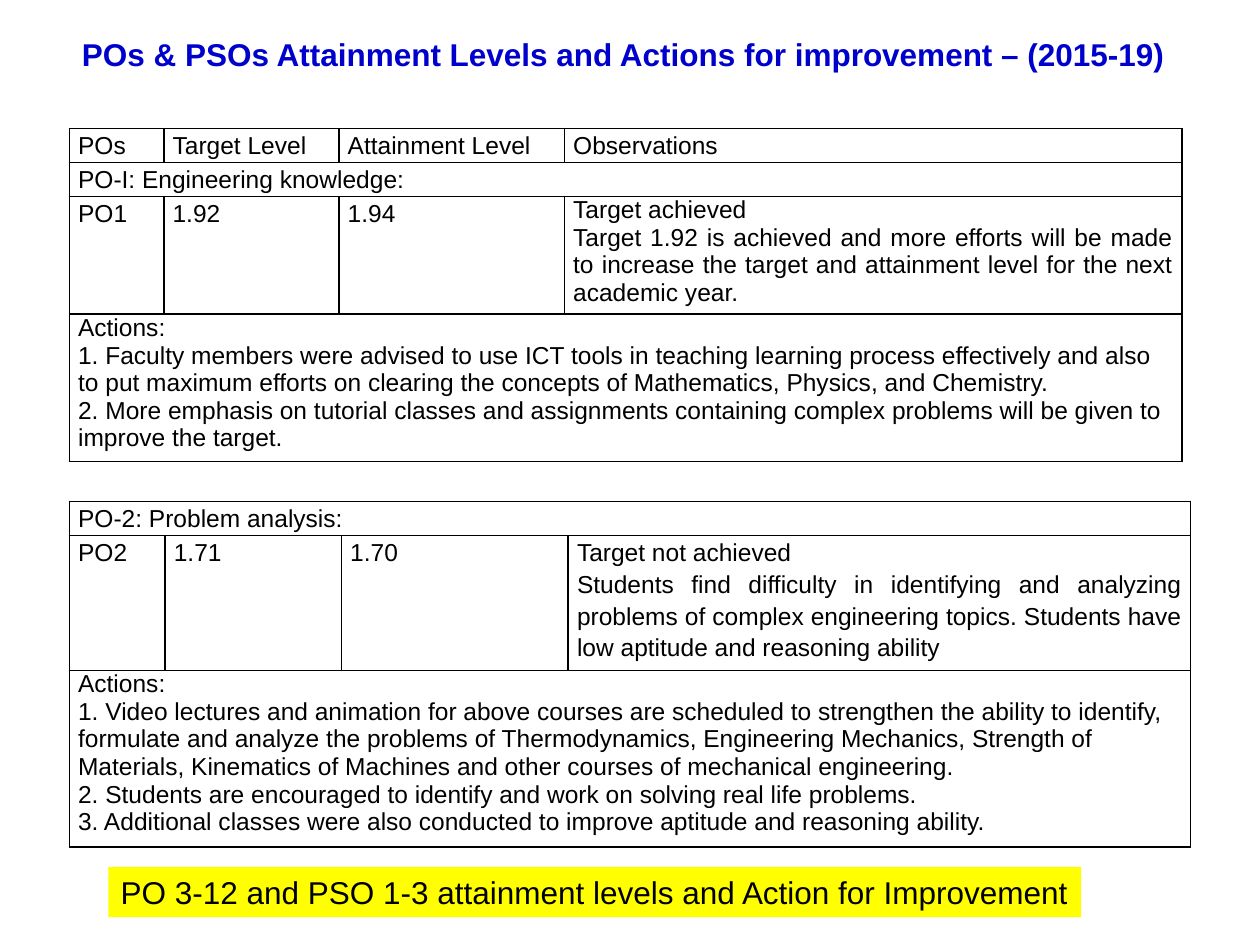
import dataclasses
import typing

import pptx
import pptx.dml.color
import pptx.enum.text
import pptx.oxml
import pptx.oxml.ns
import pptx.util

Inches, Pt = pptx.util.Inches, pptx.util.Pt
RGBColor = pptx.dml.color.RGBColor
PP_ALIGN = pptx.enum.text.PP_ALIGN
MSO_ANCHOR = pptx.enum.text.MSO_ANCHOR
MSO_AUTO_SIZE = pptx.enum.text.MSO_AUTO_SIZE

BLUE = RGBColor(0x00, 0x00, 0xCC)
BLACK = RGBColor(0x00, 0x00, 0x00)
YELLOW = RGBColor(0xFF, 0xFF, 0x00)
FONT = "Arial"


@dataclasses.dataclass
class Cell:
    lines: list[str]
    align: typing.Any = PP_ALIGN.JUSTIFY
    spacing: float | None = 1.15


@dataclasses.dataclass
class Row:
    height: float
    cells: list[Cell]  # a single cell spans the whole row


@dataclasses.dataclass
class Grid:
    left: float
    top: float
    widths: list[float]
    rows: list[Row]


def labels(*texts: str) -> list[Cell]:
    return [Cell([text]) for text in texts]


def actions(*items: str) -> list[Cell]:
    return [Cell(["Actions:", *items], PP_ALIGN.LEFT, None)]


ATTAINMENT = [
    Grid(0.55, 1.02, [0.75, 1.39, 1.79, 4.9], [
        Row(0.27, labels("POs", "Target Level", "Attainment Level", "Observations")),
        Row(0.27, labels("PO-I: Engineering knowledge:")),
        Row(0.93, labels("PO1", "1.92", "1.94") + [Cell([
            "Target achieved",
            "Target 1.92 is achieved and more efforts will be made to increase "
            "the target and attainment level for the next academic year.",
        ], spacing=None)]),
        Row(1.17, actions(
            "1. Faculty members were advised to use ICT tools in teaching learning "
            "process effectively and also to put maximum efforts on clearing the "
            "concepts of Mathematics, Physics, and Chemistry.",
            "2. More emphasis on tutorial classes and assignments containing complex "
            "problems will be given to improve the target.",
        )),
    ]),
    Grid(0.55, 3.98, [0.76, 1.4, 1.8, 4.94], [
        Row(0.27, labels("PO-2: Problem analysis:")),
        Row(1.07, labels("PO2", "1.71", "1.70") + [Cell([
            "Target not achieved",
            "Students find difficulty in identifying and analyzing problems of complex "
            "engineering topics. Students have low aptitude and reasoning ability",
        ])]),
        Row(1.4, actions(
            "1. Video lectures and animation for above courses are scheduled to "
            "strengthen the ability to identify, formulate and analyze the problems of "
            "Thermodynamics, Engineering Mechanics, Strength of Materials, Kinematics "
            "of Machines and other courses of mechanical engineering.",
            "2. Students are encouraged to identify and work on solving real life problems.",
            "3. Additional classes were also conducted to improve aptitude and "
            "reasoning ability.",
        )),
    ]),
]


def add_run(p, text: str, size: float, color: RGBColor, bold: bool = False) -> None:
    r = p.add_run()
    r.text = text
    r.font.name, r.font.size, r.font.bold = FONT, Pt(size), bold
    r.font.color.rgb = color


def add_borders(cell) -> None:
    tc_pr = cell._tc.get_or_add_tcPr()
    for i, side in enumerate(("lnL", "lnR", "lnT", "lnB")):
        tc_pr.insert(i, pptx.oxml.parse_xml(
            f'<a:{side} {pptx.oxml.ns.nsdecls("a")} w="12700"><a:solidFill>'
            f'<a:srgbClr val="{BLACK}"/></a:solidFill></a:{side}>'))


def fill_cell(cell, content: Cell) -> None:
    tf = cell.text_frame
    for i, line in enumerate(content.lines):
        p = tf.add_paragraph() if i else tf.paragraphs[0]
        p.alignment = content.align
        p.line_spacing = content.spacing
        add_run(p, line, 14, BLACK)


def add_grid(slide, grid: Grid) -> None:
    height = sum(row.height for row in grid.rows)
    table = slide.shapes.add_table(
        len(grid.rows), len(grid.widths), Inches(grid.left), Inches(grid.top),
        Inches(sum(grid.widths)), Inches(height)).table
    table.first_row = table.horz_banding = False
    for column, width in zip(table.columns, grid.widths):
        column.width = Inches(width)
    for i, row in enumerate(grid.rows):
        table.rows[i].height = Inches(row.height)
        if len(row.cells) == 1:
            table.cell(i, 0).merge(table.cell(i, len(grid.widths) - 1))
        for j, content in enumerate(row.cells):
            fill_cell(table.cell(i, j), content)
    for cell in table.iter_cells():
        cell.margin_left = cell.margin_right = Inches(0.07)
        cell.margin_top = cell.margin_bottom = 0
        cell.fill.background()
        add_borders(cell)


def fit_line(sp, text: str, color: RGBColor, bold: bool, align) -> None:
    tf = sp.text_frame
    tf.word_wrap = False
    tf.auto_size = MSO_AUTO_SIZE.SHAPE_TO_FIT_TEXT
    p = tf.paragraphs[0]
    p.alignment = align
    add_run(p, text, 18, color, bold)


def main() -> None:
    prs = pptx.Presentation()
    prs.slide_width, prs.slide_height = Inches(10), Inches(7.5)
    s = prs.slides.add_slide(prs.slide_layouts.get_by_name("Title Only"))

    # Title
    title = s.shapes.title
    title.left, title.top = Inches(0.55), Inches(0.23)
    title.width, title.height = Inches(8.88), Inches(0.4)
    title.text_frame.vertical_anchor = MSO_ANCHOR.MIDDLE
    fit_line(title, "POs & PSOs Attainment Levels and Actions for improvement – (2015-19)",
             BLUE, True, PP_ALIGN.JUSTIFY)

    # Attainment tables
    for grid in ATTAINMENT:
        add_grid(s, grid)

    # Highlighted note
    note = s.shapes.add_textbox(Inches(0.86), Inches(6.88), Inches(7.72), Inches(0.4))
    note.fill.solid()
    note.fill.fore_color.rgb = YELLOW
    fit_line(note, "PO 3-12 and PSO 1-3 attainment levels and Action for Improvement",
             BLACK, False, PP_ALIGN.LEFT)

    prs.save("out.pptx")


if __name__ == "__main__":
    main()
